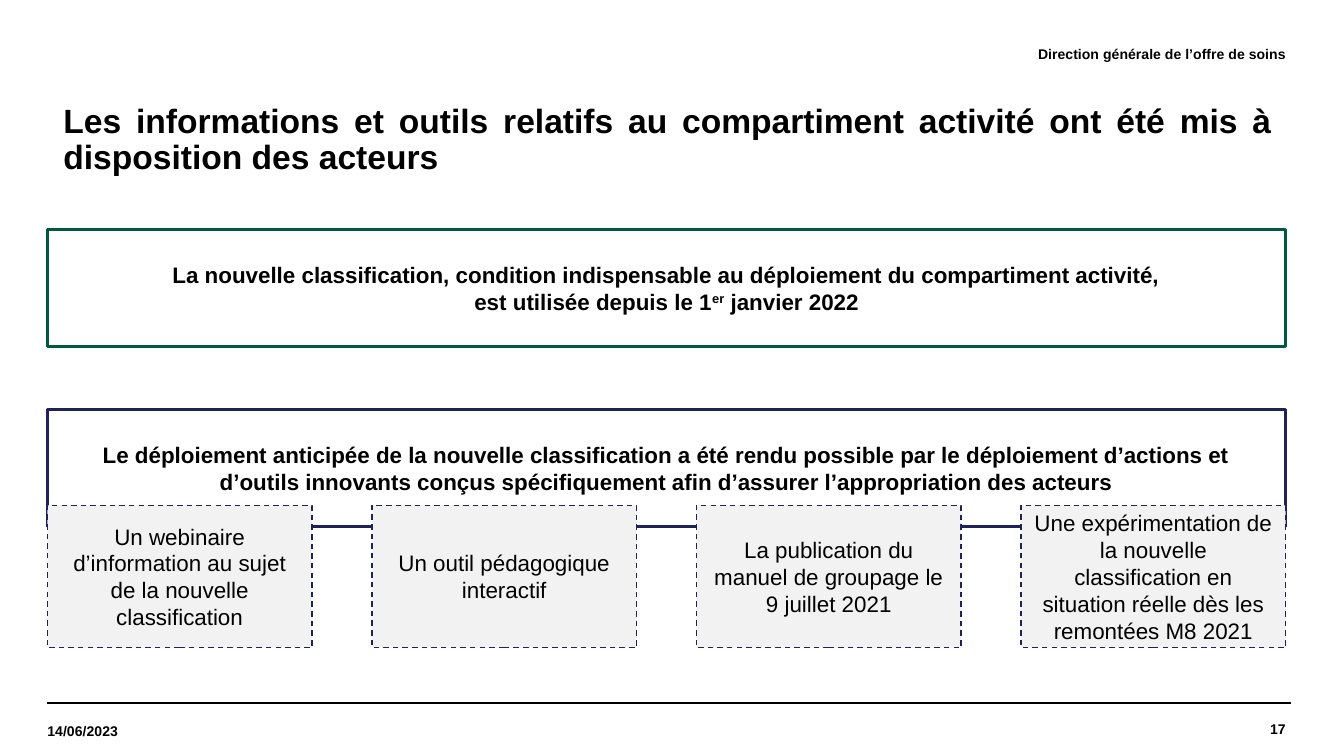
from lxml import etree
from pptx import Presentation
from pptx.dml.color import RGBColor
from pptx.enum import dml, shapes, text
from pptx.oxml.ns import qn
from pptx.util import Pt

BLACK = RGBColor(0x00, 0x00, 0x00)
WHITE = RGBColor(0xFF, 0xFF, 0xFF)
GREY = RGBColor(0xF2, 0xF2, 0xF2)
GREEN = RGBColor(0x00, 0x58, 0x41)
NAVY = RGBColor(0x21, 0x21, 0x5A)

LEFT, WIDTH = 25.4, 663.4
CARD_WIDTH = 141.8
ALIGN = text.PP_ALIGN

TITLE = ("Les informations et outils relatifs au compartiment activité "
         "ont été mis à disposition des acteurs")
CLASSIFICATION = [
    ["La nouvelle classification, condition indispensable au déploiement "
     "du compartiment activité,"],
    ["est utilisée depuis le 1", ("er", 30), " janvier 2022"],
]
DEPLOYMENT = [
    ["Le déploiement anticipée de la nouvelle classification a été rendu possible "
     "par le déploiement d’actions et d’outils innovants conçus spécifiquement "
     "afin d’assurer l’appropriation des acteurs"],
]
ACTIONS = [
    "Un webinaire d’information au sujet de la nouvelle classification",
    "Un outil pédagogique interactif",
    "La publication du manuel de groupage le 9 juillet 2021",
    "Une expérimentation de la nouvelle classification en situation réelle "
    "dès les remontées M8 2021",
]


def write_text(shape, paragraphs, size, bold, alignment):
    """Fill a shape with paragraphs of runs; a (text, percent) run is raised."""
    frame = shape.text_frame
    frame.word_wrap = True
    frame.auto_size = text.MSO_AUTO_SIZE.NONE
    frame.vertical_anchor = text.MSO_ANCHOR.MIDDLE
    for index, runs in enumerate(paragraphs):
        paragraph = frame.add_paragraph() if index else frame.paragraphs[0]
        paragraph.alignment = alignment
        for item in runs:
            content, raised = item if isinstance(item, tuple) else (item, 0)
            run = paragraph.add_run()
            run.text = content
            run.font.name = "Arial"
            run.font.size = Pt(size)
            run.font.bold = bold
            run.font.color.rgb = BLACK
            if raised:
                run.font._element.set("baseline", str(raised * 1000))


def add_label(slide, box, content, alignment):
    """Add a small bold label without insets."""
    label = slide.shapes.add_textbox(*map(Pt, box))
    frame = label.text_frame
    frame.margin_left = frame.margin_right = 0
    frame.margin_top = frame.margin_bottom = 0
    write_text(label, [[content]], 7.5, True, alignment)


def add_box(slide, box, paragraphs, fill, line, line_width, bold):
    """Add an outlined rectangle with centred text."""
    shape = slide.shapes.add_shape(shapes.MSO_SHAPE.RECTANGLE, *map(Pt, box))
    shape.shadow.inherit = False
    shape.fill.solid()
    shape.fill.fore_color.rgb = fill
    shape.line.color.rgb = line
    shape.line.width = Pt(line_width)
    write_text(shape, paragraphs, 12, bold, ALIGN.CENTER)
    return shape


def add_title(slide, box):
    """Place and format the title placeholder."""
    title = slide.shapes.title
    title.left, title.top, title.width, title.height = map(Pt, box)
    title.text_frame.margin_left = Pt(8.6)
    write_text(title, [[TITLE]], 18, True, ALIGN.JUSTIFY)
    title.text_frame.paragraphs[0].line_spacing = 0.9


def add_action_cards(slide, box):
    """Spread the dashed action cards evenly across the box."""
    left, top, width, height = box
    pitch = (width - CARD_WIDTH) / (len(ACTIONS) - 1)
    for index, action in enumerate(ACTIONS):
        card_box = (left + index * pitch, top, CARD_WIDTH, height)
        card = add_box(slide, card_box, [[action]], GREY, NAVY, 0.75, False)
        card.line.dash_style = dml.MSO_LINE.DASH


def add_footer(slide, box):
    """Add the footer rule, the date and the page number."""
    left, top, width, height = box
    rule = slide.shapes.add_connector(
        shapes.MSO_CONNECTOR.STRAIGHT, Pt(left), Pt(top), Pt(left + width + 3), Pt(top))
    rule.line.color.rgb = BLACK
    rule.line.width = Pt(0.8)
    etree.SubElement(rule._element.spPr, qn("a:effectLst"))
    add_label(slide, (left, top + 1.4, 95, height - 0.6), "14/06/2023", ALIGN.LEFT)
    add_label(slide, (left + width - 106.5, top, 106.5, height), "17", ALIGN.RIGHT)


def main():
    """Build the slide and save it."""
    presentation = Presentation()
    presentation.slide_width, presentation.slide_height = Pt(720), Pt(405)
    slide = presentation.slides.add_slide(presentation.slide_layouts[5])
    add_footer(slide, (LEFT, 376.6, WIDTH, 28))
    add_title(slide, (LEFT, 54, WIDTH, 42.5))
    add_label(slide, (226, 15.1, LEFT + WIDTH - 226, 28), "Direction générale de l’offre de soins",
              ALIGN.RIGHT)
    add_box(slide, (LEFT, 123.1, WIDTH, 62.6), CLASSIFICATION, WHITE, GREEN, 1.5, True)
    add_box(slide, (LEFT, 219.6, WIDTH, 62.6), DEPLOYMENT, WHITE, NAVY, 1.5, True)
    add_action_cards(slide, (LEFT, 270.7, WIDTH, 76.3))
    presentation.save("out.pptx")


if __name__ == "__main__":
    main()
